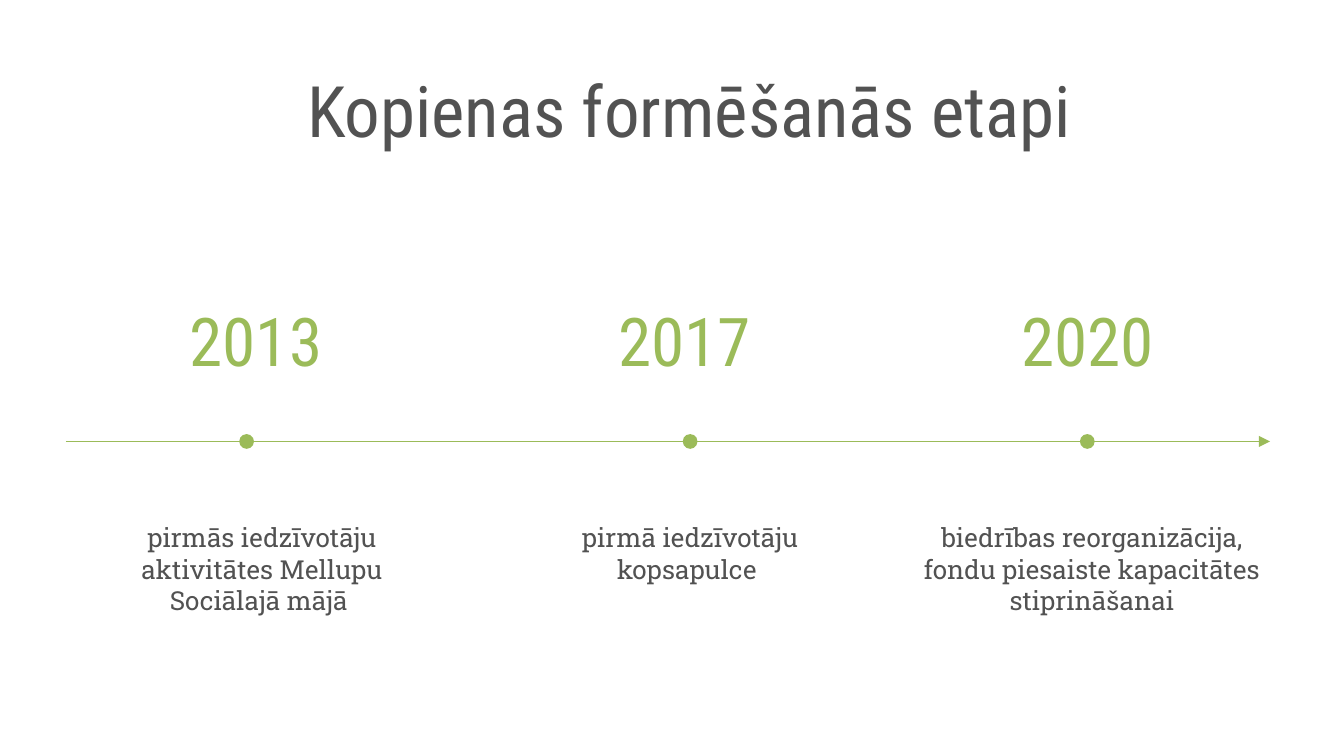
import pptx
import pptx.util
import pptx.dml.color
import pptx.enum.shapes
import pptx.enum.text
import pptx.oxml
import pptx.oxml.ns

GREEN, GREY = "9BBB59", "525252"

prs = pptx.Presentation()
prs.slide_width = pptx.util.Inches(10)
prs.slide_height = prs.slide_width * 9 // 16
W, H = prs.slide_width / 100, prs.slide_height / 100  # one percent of the slide
s = prs.slides.add_slide(prs.slide_layouts[6])


def rgb(value):
    return pptx.dml.color.RGBColor.from_string(value)


def add_text(text, x, y, w, h, size, font, color=GREY, anchor="TOP"):
    """Centred text box; x, y, w, h are percentages of the slide."""
    sp = s.shapes.add_textbox(int(x * W), int(y * H), int(w * W), int(h * H))
    tf = sp.text_frame
    tf.word_wrap = True
    tf.margin_left = tf.margin_right = tf.margin_top = tf.margin_bottom = 0
    tf.vertical_anchor = pptx.enum.text.MSO_ANCHOR[anchor]
    p = tf.paragraphs[0]
    p.alignment = pptx.enum.text.PP_ALIGN.CENTER
    r = p.add_run()
    r.text = text
    r.font.name, r.font.size = font, pptx.util.Pt(size)
    r.font.color.rgb = rgb(color)


# Title
add_text("Kopienas formēšanās etapi", 14.2, 8.75, 74.2, 16.4, 38, "Roboto Condensed")

# Timeline arrow
axis_y = 58.4
line = s.shapes.add_connector(
    pptx.enum.shapes.MSO_CONNECTOR.STRAIGHT,
    int(4.9 * W), int(axis_y * H), int(94.5 * W), int(axis_y * H))
line.line.color.rgb = rgb(GREEN)
line.line.width = pptx.util.Pt(0.75)
ns = pptx.oxml.ns.nsdecls("a")
line.line._get_or_add_ln().append(pptx.oxml.parse_xml(f'<a:tailEnd {ns} type="triangle"/>'))
line._element.spPr.append(pptx.oxml.parse_xml(f"<a:effectLst {ns}/>"))

# Stages: year, its centre and width, dot centre, description, its centre and width
stages = [
    ("2013", 19.05, 24.1, 18.35,
     "pirmās iedzīvotāju aktivitātes Mellupu Sociālajā mājā ", 19.5, 20),
    ("2017", 50.95, 37.9, 51.35, "pirmā iedzīvotāju kopsapulce ", 51.35, 19.3),
    ("2020", 80.95, 30.3, 80.9,
     "biedrības reorganizācija, fondu piesaiste kapacitātes stiprināšanai", 81.25, 25.9),
]
dot = int(1.1 * W)
for year, year_x, year_w, dot_x, text, text_x, text_w in stages:
    add_text(year, year_x - year_w / 2, 36.8, year_w, 13.5, 36, "Roboto Condensed",
             color=GREEN, anchor="BOTTOM")
    add_text(text, text_x - text_w / 2, 69, text_w, 14.8, 14, "Roboto Slab")
    sp = s.shapes.add_shape(pptx.enum.shapes.MSO_SHAPE.OVAL, int(dot_x * W - dot / 2),
                            int(axis_y * H - dot / 2), dot, dot)
    sp.shadow.inherit = False
    sp.fill.solid()
    sp.fill.fore_color.rgb = rgb(GREEN)
    sp.line.fill.background()

prs.save("out.pptx")
